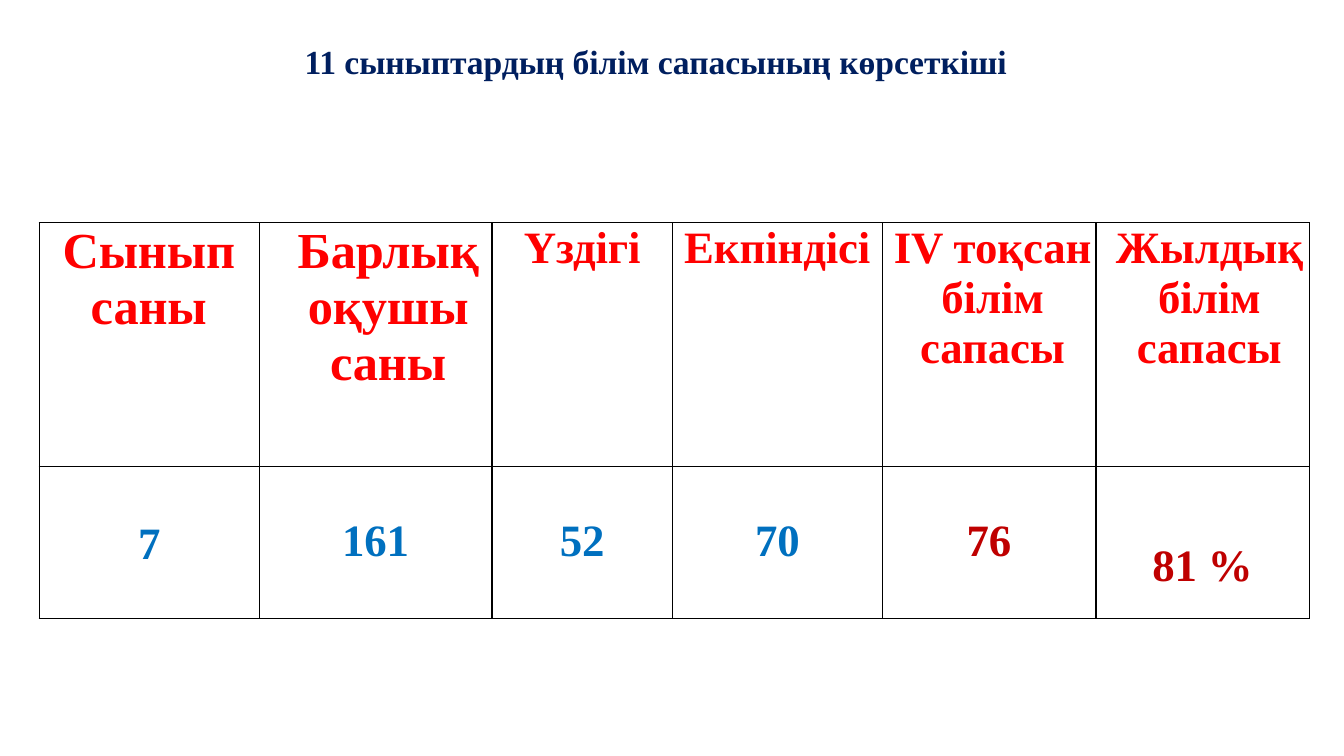
import pptx
import pptx.dml.color
import pptx.enum.text
import pptx.oxml
import pptx.util
from pptx.util import Inches

COLORS = {"navy": "001F5F", "red": "FF0000", "blue": "0070BF",
          "dark_red": "BF0000", "border": "000000"}
FONT = "Times New Roman"
ALIGN = pptx.enum.text.PP_ALIGN
NAMESPACE = "http://schemas.openxmlformats.org/drawingml/2006/main"

COLUMN_WIDTHS = [2.18, 2.31, 1.79, 2.08, 2.12, 2.12]
ROW_HEIGHTS = [2.42, 1.51]
HEADERS = [
    ("Сынып саны", dict(size=36, align=ALIGN.LEFT, left=0.51, first=-0.28)),
    ("Барлық оқушы саны", dict(size=36, left=0.25)),
    ("Үздігі", {}),
    ("Екпіндісі", {}),
    ("IV тоқсан білім сапасы", dict(left=0.07)),
    ("Жылдық білім сапасы", dict(left=0.13)),
]
# Text, colour, top margin and format of each result
RESULTS = [
    ("7", "blue", 0.52, {}),
    ("161", "blue", 0.49, {}),
    ("52", "blue", 0.49, {}),
    ("70", "blue", 0.49, {}),
    ("76", "dark_red", 0.49, {}),
    ("81 %", "dark_red", 0.74, dict(align=ALIGN.LEFT, left=0.56)),
]


def write_text(frame, text, *, color, size=32, align=ALIGN.CENTER,
               left=0, first=0, spacing=-0.1):
    """Fill a frame; left and first are indents in inches, spacing is in points."""
    para = frame.paragraphs[0]
    para.alignment = align
    properties = para._p.get_or_add_pPr()
    properties.set("marL", str(Inches(left)))
    properties.set("indent", str(Inches(first)))
    span = para.add_run()
    span.text = text
    span.font.name = FONT
    span.font.size = pptx.util.Pt(size)
    span.font.bold = True
    span.font.color.rgb = pptx.dml.color.RGBColor.from_string(COLORS[color])
    span.font._element.set("spc", str(round(spacing * 100)))


def set_margins(target, top):
    target.margin_left = target.margin_right = target.margin_bottom = 0
    target.margin_top = Inches(top)


def style_cell(cell, top):
    set_margins(cell, top)
    properties = cell._tc.get_or_add_tcPr()
    for side in ("lnL", "lnR", "lnT", "lnB"):
        properties.append(pptx.oxml.parse_xml(
            f'<a:{side} xmlns:a="{NAMESPACE}" w="{pptx.util.Pt(1)}"><a:solidFill>'
            f'<a:srgbClr val="{COLORS["border"]}"/></a:solidFill></a:{side}>'))
    cell.fill.background()


def add_title(page, left, top, width, height):
    box = page.shapes.add_textbox(Inches(left), Inches(top), Inches(width), Inches(height))
    frame = box.text_frame
    frame.word_wrap = True
    set_margins(frame, 0.16)
    write_text(frame, "11 сыныптардың білім сапасының көрсеткіші",
               color="navy", size=24, align=ALIGN.LEFT, left=0.5, spacing=-0.05)


def add_results_table(page, left, top):
    table = page.shapes.add_table(
        len(ROW_HEIGHTS), len(COLUMN_WIDTHS), Inches(left), Inches(top),
        Inches(sum(COLUMN_WIDTHS)), Inches(sum(ROW_HEIGHTS))).table
    table.first_row = table.horz_banding = False
    for column, width in zip(table.columns, COLUMN_WIDTHS):
        column.width = Inches(width)
    for row, height in zip(table.rows, ROW_HEIGHTS):
        row.height = Inches(height)
    header_row = [(text, "red", 0.01, style) for text, style in HEADERS]
    for row, entries in zip(table.rows, (header_row, RESULTS)):
        for cell, (text, color, margin, style) in zip(row.cells, entries):
            style_cell(cell, margin)
            write_text(cell.text_frame, text, color=color, **style)


def main():
    deck = pptx.Presentation()
    deck.slide_width, deck.slide_height = Inches(13.33), Inches(7.5)
    page = deck.slides.add_slide(deck.slide_layouts[6])
    add_results_table(page, 0.39, 2.21)
    add_title(page, 2.52, 0.25, 8.52, 0.93)
    deck.save("out.pptx")


if __name__ == "__main__":
    main()
